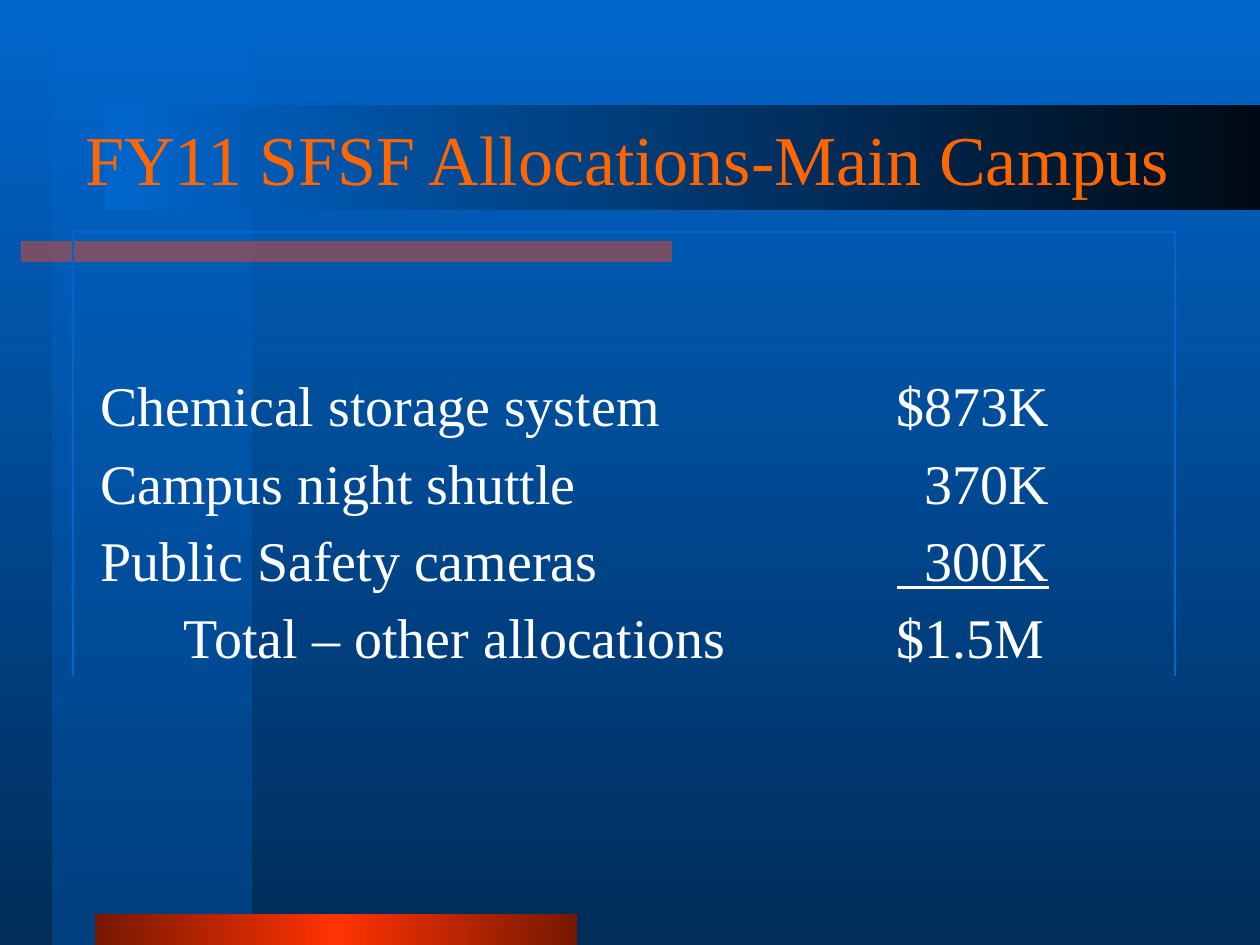
from lxml import etree
from pptx import Presentation
from pptx import util as u
from pptx.dml.color import RGBColor
from pptx.enum import shapes, text
from pptx.oxml.ns import qn

FONT = "Times New Roman"
BLUE = "0066CC"


def px(n):
    return u.Emu(n * 914400 // 126)


def rgb(code):
    return RGBColor.from_string(code)


def blend(fill, root, codes, angle):
    fill.gradient()
    fill.gradient_angle = angle
    stops = root.find(".//" + qn("a:gsLst"))
    for stop in list(stops):
        stops.remove(stop)
    for i, code in enumerate(codes):
        pos = str(100000 * i // (len(codes) - 1))
        stop = etree.SubElement(stops, qn("a:gs"), pos=pos)
        etree.SubElement(stop, qn("a:srgbClr"), val=code)


def add_bar(slide, box, codes, angle=0):
    bar = slide.shapes.add_shape(shapes.MSO_SHAPE.RECTANGLE, *map(px, box))
    bar.shadow.inherit = False
    bar.line.fill.background()
    if len(codes) > 1:
        blend(bar.fill, bar._element, codes, angle)
    else:
        bar.fill.solid()
        bar.fill.fore_color.rgb = rgb(codes[0])
    return bar


def fade(bar, share):
    tint = bar._element.spPr.find(".//" + qn("a:srgbClr"))
    etree.SubElement(tint, qn("a:alpha"), val=str(share * 1000))


def style(para, size, code):
    para.font.name = FONT
    para.font.size = u.Pt(size)
    para.font.color.rgb = rgb(code)


def add_title(slide, words):
    box = slide.shapes.add_textbox(*map(px, (73, 73, 1134, 168)))
    frame = box.text_frame
    frame.word_wrap = True
    frame.vertical_anchor = text.MSO_ANCHOR.MIDDLE
    frame.text = words
    style(frame.paragraphs[0], 40, "FF6600")


def edge(cell, sides):
    props = cell._tc.get_or_add_tcPr()
    for i, side in enumerate("LRTB"):
        line = etree.Element(qn("a:ln" + side), w="12700")
        if side in sides:
            fill = etree.SubElement(line, qn("a:solidFill"))
            etree.SubElement(fill, qn("a:srgbClr"), val=BLUE)
        else:
            etree.SubElement(line, qn("a:noFill"))
        props.insert(i, line)


def add_table(slide, rows):
    frame = slide.shapes.add_table(len(rows) + 1, 2, *map(px, (73, 232, 1102, 435)))
    table = frame.table
    table.first_row = table.horz_banding = False
    for col, wide in zip(table.columns, (811, 291)):
        col.width = px(wide)
    for i, row in enumerate(table.rows):
        row.height = px(75 if i else 135)
        for j, cell in enumerate(row.cells):
            cell.fill.background()
            edge(cell, "LR"[j] + ("" if i else "T"))
            if i:
                words, left = rows[i - 1][j]
                cell.margin_left = px(left)
                cell.margin_top, cell.margin_bottom = px(10), 0
                cell.text = words
                style(cell.text_frame.paragraphs[0], 32, "FFFFFF")
    return table


def main():
    deck = Presentation()
    deck.slide_width, deck.slide_height = px(1260), px(945)
    slide = deck.slides.add_slide(deck.slide_layouts[6])
    blend(slide.background.fill, slide._element, (BLUE, "002D5A"), 270)
    add_bar(slide, (52, 0, 200, 945), (BLUE, "003F7E"), 270)
    fade(add_bar(slide, (21, 241, 651, 21), ("ED4722",)), 50)
    add_bar(slide, (95, 914, 482, 31), ("761800", "FF3300", "761800"))
    add_bar(slide, (105, 105, 1155, 105), (BLUE, "000A14"))
    add_title(slide, "FY11 SFSF Allocations-Main Campus")
    table = add_table(slide, (
        (("Chemical storage system", 27), ("$873K", 13)),
        (("Campus night shuttle", 27), ("370K", 41)),
        (("Public Safety cameras", 27), ("  300K", 13)),
        (("Total – other allocations", 111), ("$1.5M", 13)),
    ))
    table.cell(3, 1).text_frame.paragraphs[0].font.underline = True
    deck.save("out.pptx")


if __name__ == "__main__":
    main()
